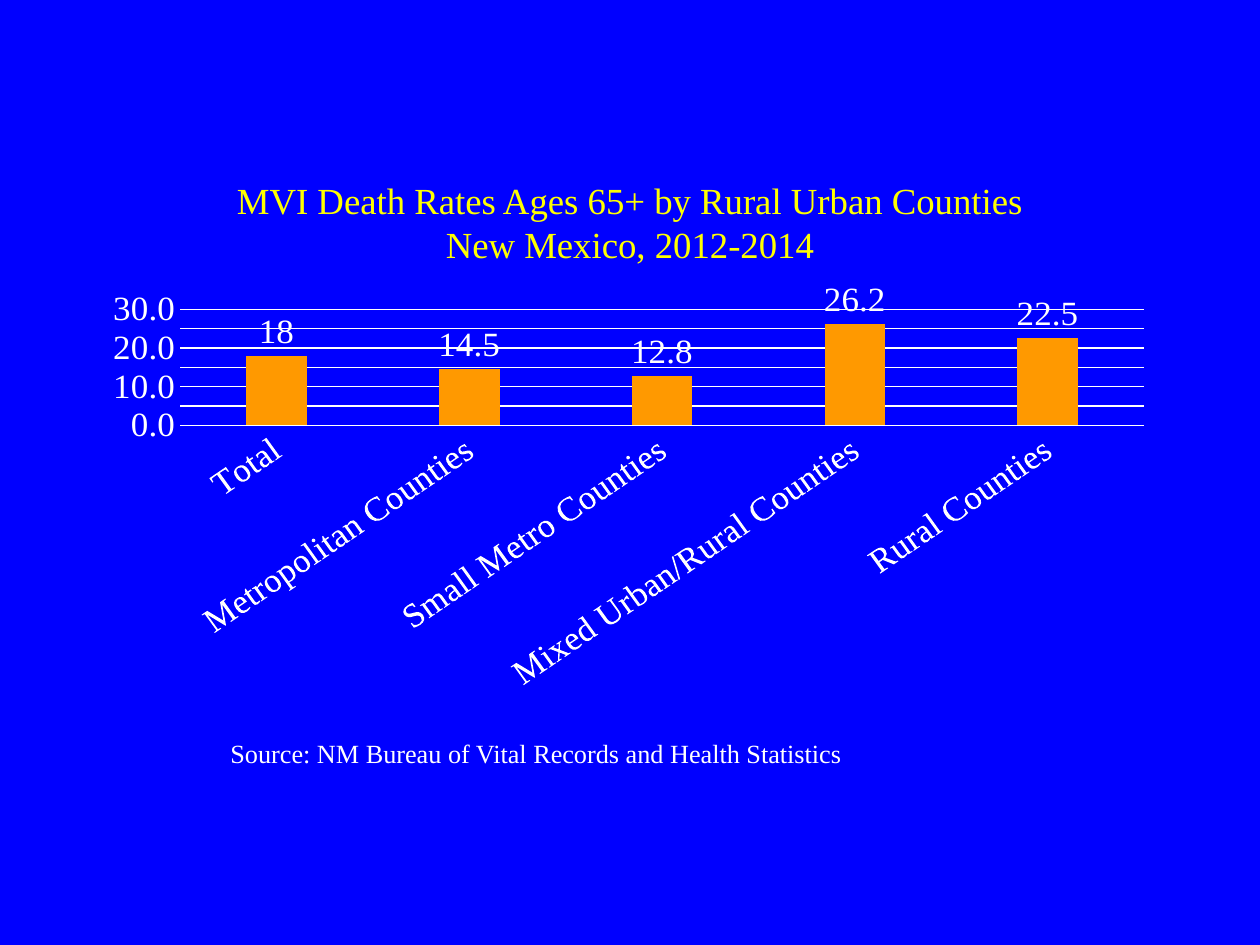
from dataclasses import dataclass

from lxml.etree import SubElement
from pptx import Presentation
from pptx.chart.data import CategoryChartData
from pptx.dml.color import RGBColor
from pptx.enum.chart import XL_CHART_TYPE as ChartType
from pptx.enum.chart import XL_LABEL_POSITION as LabelPos
from pptx.enum.chart import XL_TICK_MARK as Tick
from pptx.enum.text import MSO_ANCHOR as Anchor
from pptx.enum.text import PP_ALIGN as Align
from pptx.oxml.ns import qn
from pptx.util import Inches, Pt

BLUE = RGBColor(0x00, 0x00, 0xFF)
YELLOW = RGBColor(0xFF, 0xFF, 0x00)
WHITE = RGBColor(0xFF, 0xFF, 0xFF)
ORANGE = RGBColor(0xFF, 0x99, 0x00)
FONT = "Times New Roman"
LABEL_ANGLE = -35  # degrees


@dataclass
class Rate:
    county: str
    value: float


RATES = [
    Rate("Total", 18),
    Rate("Metropolitan Counties", 14.5),
    Rate("Small Metro Counties", 12.8),
    Rate("Mixed Urban/Rural Counties", 26.2),
    Rate("Rural Counties", 22.5),
]


def set_attrs(obj, values: dict) -> None:
    for name, value in values.items():
        setattr(obj, name, value)


def style_font(font, size: float, color: RGBColor) -> None:
    set_attrs(font, {"name": FONT, "size": Pt(size), "bold": False})
    font.color.rgb = color


def style_line(line, color: RGBColor) -> None:
    line.color.rgb = color
    line.width = Pt(0.75)


def place_plot(chart, **fractions: float) -> None:
    """Fix the inner plot area as fractions of the chart frame."""
    plot_area = chart.plots[0]._element.getparent()
    layout = plot_area.find(qn("c:layout"))
    if layout is None:
        layout = SubElement(plot_area, qn("c:layout"))
        plot_area.insert(0, layout)
    manual = SubElement(layout, qn("c:manualLayout"))
    settings = {"layoutTarget": "inner", "xMode": "edge", "yMode": "edge", **fractions}
    for name, value in settings.items():
        SubElement(manual, qn(f"c:{name}")).set("val", str(value))


def add_title(slide, text: str) -> None:
    s = slide.shapes.title
    set_attrs(s, {"left": Inches(0.75), "top": Inches(1.29),
                  "width": Inches(8.5), "height": Inches(0.94)})
    tf = s.text_frame
    tf.text = text
    tf.vertical_anchor = Anchor.MIDDLE
    p = tf.paragraphs[0]
    p.alignment = Align.CENTER
    for r in p.runs:
        style_font(r.font, 21, YELLOW)


def add_source(slide, text: str) -> None:
    s = slide.shapes.add_textbox(Inches(1.73), Inches(5.8), Inches(6.25), Inches(0.35))
    tf = s.text_frame
    tf.word_wrap = True
    tf.text = text
    style_font(tf.paragraphs[0].runs[0].font, 15, WHITE)


def add_rate_chart(slide, rates: list[Rate]) -> None:
    data = CategoryChartData(number_format="General")
    data.categories = [rate.county for rate in rates]
    data.add_series("Series 1", [rate.value for rate in rates])
    chart = slide.shapes.add_chart(
        ChartType.COLUMN_CLUSTERED,
        Inches(0.75), Inches(2.23), Inches(8.5), Inches(3.38), data).chart
    set_attrs(chart, {"has_legend": False, "has_title": False})
    style_font(chart.font, 10, WHITE)
    place_plot(chart, x=0.08, y=0.04, w=0.9, h=0.28)

    # Columns and their values
    plot = chart.plots[0]
    set_attrs(plot, {"gap_width": 219, "overlap": -27,
                     "vary_by_categories": False, "has_data_labels": True})
    fill = plot.series[0].format.fill
    fill.solid()
    fill.fore_color.rgb = ORANGE
    labels = plot.data_labels
    set_attrs(labels, {"show_value": True, "position": LabelPos.OUTSIDE_END})
    style_font(labels.font, 20, WHITE)

    # Axes
    cat, val = chart.category_axis, chart.value_axis
    for axis in (cat, val):
        set_attrs(axis, {"major_tick_mark": Tick.NONE, "minor_tick_mark": Tick.NONE})
        style_font(axis.tick_labels.font, 20, WHITE)
    style_line(cat.format.line, WHITE)
    body = cat._element.find(qn("c:txPr")).find(qn("a:bodyPr"))
    body.set("rot", str(LABEL_ANGLE * 60000))
    set_attrs(val, {"minimum_scale": 0, "maximum_scale": 30, "major_unit": 5,
                    "has_major_gridlines": True})
    set_attrs(val.tick_labels, {"number_format": "0.0", "number_format_is_linked": False})
    val.format.line.fill.background()
    style_line(val.major_gridlines.format.line, WHITE)


def main() -> None:
    prs = Presentation()
    set_attrs(prs, {"slide_width": Inches(10), "slide_height": Inches(7.5)})
    slide = prs.slides.add_slide(prs.slide_layouts[5])
    bg = slide.background.fill
    bg.solid()
    bg.fore_color.rgb = BLUE

    add_title(slide, "MVI Death Rates Ages 65+ by Rural Urban Counties\vNew Mexico, 2012-2014")
    add_source(slide, "Source: NM Bureau of Vital Records and Health Statistics")
    add_rate_chart(slide, RATES)
    prs.save("out.pptx")


if __name__ == "__main__":
    main()
